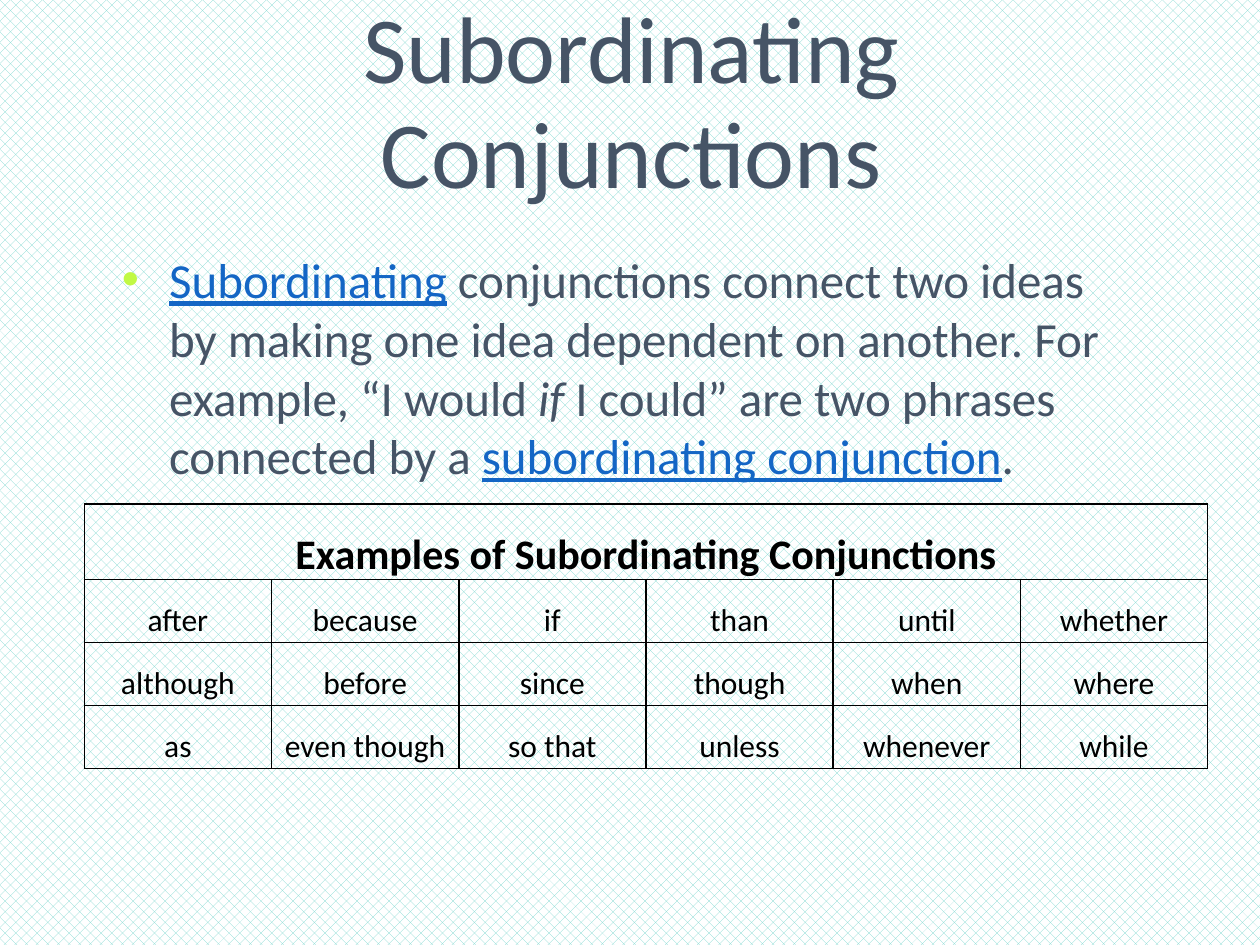
"""Build a slide on subordinating conjunctions with a definition and a table of examples."""
from lxml import etree
from pptx import Presentation
from pptx.dml.color import RGBColor
from pptx.enum.dml import MSO_PATTERN
from pptx.enum.text import MSO_ANCHOR, PP_ALIGN
from pptx.oxml.ns import qn
from pptx.util import Pt

CENTER, LEFT = PP_ALIGN.CENTER, PP_ALIGN.LEFT
MIDDLE, TOP = MSO_ANCHOR.MIDDLE, MSO_ANCHOR.TOP
PATTERN = MSO_PATTERN.from_xml("pct40")

FONT = "Calibri"
COLORS = {
    "text": "465466",
    "link": "1466C5",
    "bullet": "C1F944",
    "table": "000000",
    "pattern": "7CD7CF",
    "paper": "FFFFFF",
}

TITLE = "Subordinating Conjunctions"
DEFINITION = [
    ("Subordinating", "link"),
    (" conjunctions connect two ideas by making one idea dependent on another. "
     "For example, “I would ", "plain"),
    ("if", "italic"),
    (" I could” are two phrases connected by a ", "plain"),
    ("subordinating conjunction", "link"),
    (".", "plain"),
]
TABLE_HEADING = "Examples of Subordinating Conjunctions"
EXAMPLES = [
    ["after", "because", "if", "than", "until", "whether"],
    ["although", "before", "since", "though", "when", "where"],
    ["as", "even though", "so that", "unless", "whenever", "while"],
]

TITLE_BOX = (62.6, 2.9, 596.2, 110.9)
BODY_BOX = (62.6, 139, 596.2, 337.7)
TABLE_LEFT, TABLE_TOP = 48.2, 288
COLUMN_WIDTH, HEADING_HEIGHT, ROW_HEIGHT = 107, 42, 36
CELL_MARGIN = 5
BULLET_INDENT = 27


def color(name):
    return RGBColor.from_string(COLORS[name])


def style_font(font, size, color_name, bold=False):
    font.name = FONT
    font.size = Pt(size)
    font.bold = bold
    font.color.rgb = color(color_name)


def add_text_box(slide, box, anchor):
    shape = slide.shapes.add_textbox(*map(Pt, box))
    shape.text_frame.word_wrap = True
    shape.text_frame.vertical_anchor = anchor
    return shape.text_frame


def add_bullet(paragraph):
    properties = paragraph._p.get_or_add_pPr()
    properties.set("marL", str(Pt(BULLET_INDENT)))
    properties.set("indent", str(-Pt(BULLET_INDENT)))
    bullet_color = etree.SubElement(properties, qn("a:buClr"))
    etree.SubElement(bullet_color, qn("a:srgbClr"), val=COLORS["bullet"])
    etree.SubElement(properties, qn("a:buFont"), typeface="Arial")
    etree.SubElement(properties, qn("a:buChar"), char="•")


def add_borders(cell):
    properties = cell._tc.get_or_add_tcPr()
    for position, side in enumerate(("a:lnL", "a:lnR", "a:lnT", "a:lnB")):
        line = etree.Element(qn(side), w=str(Pt(1)))
        fill = etree.SubElement(line, qn("a:solidFill"))
        etree.SubElement(fill, qn("a:srgbClr"), val=COLORS["table"])
        properties.insert(position, line)


def fill_cell(cell, text, size, bold=False):
    cell.text_frame.text = text
    cell.vertical_anchor = MIDDLE
    cell.margin_left = cell.margin_right = Pt(CELL_MARGIN)
    cell.margin_top = cell.margin_bottom = 0
    paragraph = cell.text_frame.paragraphs[0]
    paragraph.alignment = CENTER
    paragraph.line_spacing = 1.5
    style_font(paragraph.runs[0].font, size, "table", bold)


def add_title(slide):
    text_frame = add_text_box(slide, TITLE_BOX, MIDDLE)
    text_frame.text = TITLE
    paragraph = text_frame.paragraphs[0]
    paragraph.alignment = CENTER
    paragraph.line_spacing = Pt(60)
    style_font(paragraph.runs[0].font, 54, "text")


def add_definition(slide):
    paragraph = add_text_box(slide, BODY_BOX, TOP).paragraphs[0]
    paragraph.alignment = LEFT
    add_bullet(paragraph)
    for text, kind in DEFINITION:
        run = paragraph.add_run()
        run.text = text
        style_font(run.font, 28, "link" if kind == "link" else "text")
        run.font.underline = kind == "link"
        run.font.italic = kind == "italic"


def add_examples(slide):
    row_count, column_count = len(EXAMPLES) + 1, len(EXAMPLES[0])
    height = HEADING_HEIGHT + ROW_HEIGHT * len(EXAMPLES)
    table = slide.shapes.add_table(
        row_count, column_count, Pt(TABLE_LEFT), Pt(TABLE_TOP),
        Pt(COLUMN_WIDTH * column_count), Pt(height)).table
    table.first_row = table.horz_banding = False
    for index, row in enumerate(table.rows):
        row.height = Pt(ROW_HEIGHT if index else HEADING_HEIGHT)
    for cell in table.iter_cells():
        cell.fill.background()
        add_borders(cell)
    table.cell(0, 0).merge(table.cell(0, column_count - 1))
    fill_cell(table.cell(0, 0), TABLE_HEADING, 24, bold=True)
    for row_index, words in enumerate(EXAMPLES, start=1):
        for column_index, word in enumerate(words):
            fill_cell(table.cell(row_index, column_index), word, 18)


def main():
    presentation = Presentation()
    presentation.slide_width, presentation.slide_height = Pt(720), Pt(540)
    slide = presentation.slides.add_slide(presentation.slide_layouts[6])
    background = slide.background.fill
    background.patterned()
    background.pattern = PATTERN
    background.fore_color.rgb = color("pattern")
    background.back_color.rgb = color("paper")
    add_title(slide)
    add_definition(slide)
    add_examples(slide)
    presentation.save("out.pptx")


if __name__ == "__main__":
    main()
